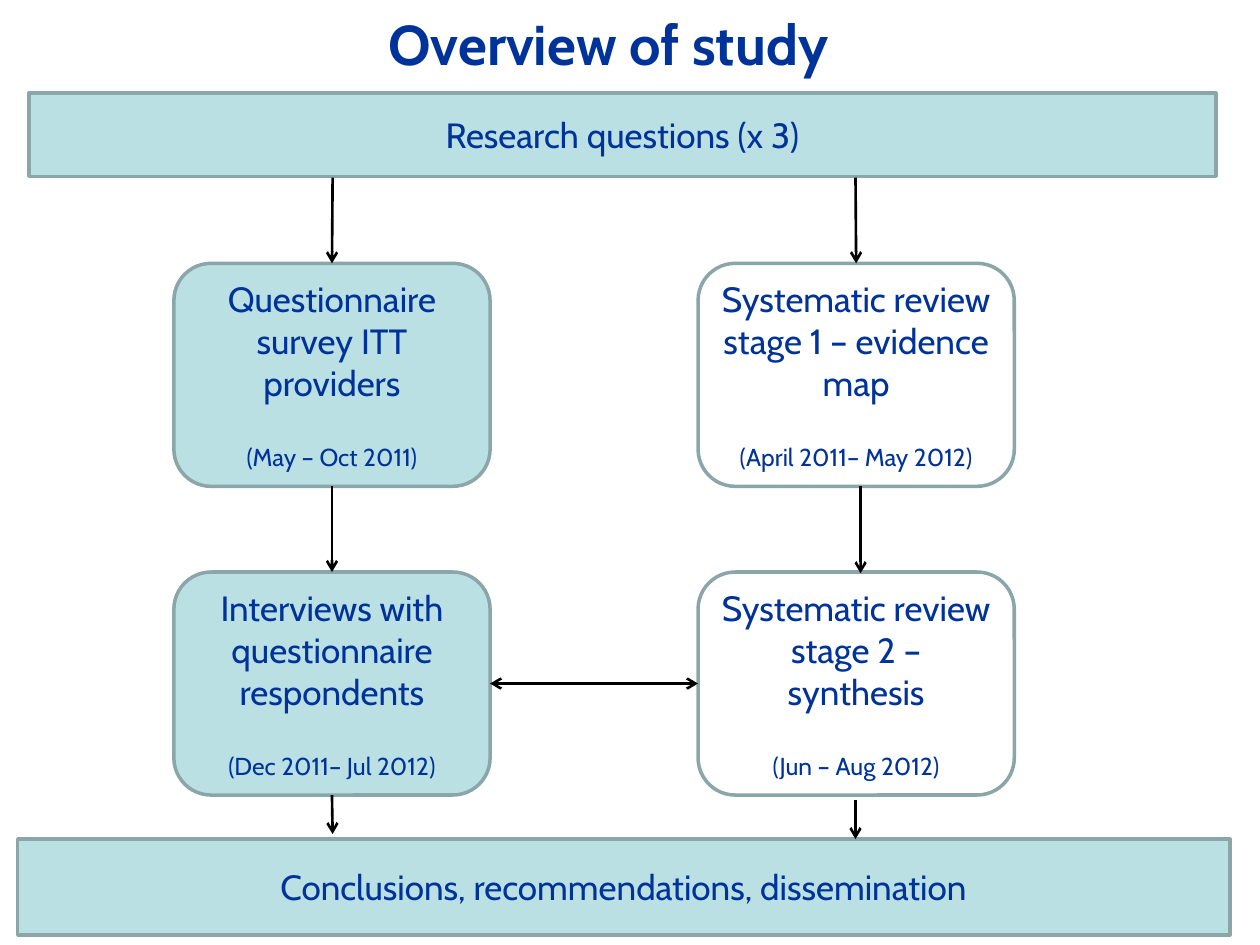
from lxml import etree
from pptx import Presentation
from pptx.dml.color import RGBColor
from pptx.enum.shapes import MSO_CONNECTOR as CONN, MSO_SHAPE as SHAPE
from pptx.enum.text import MSO_ANCHOR as ANCHOR, PP_ALIGN as ALIGN
from pptx.oxml.ns import qn
from pptx.util import Inches, Pt

NAVY = RGBColor(0x00, 0x33, 0x99)
AQUA = RGBColor(0xBB, 0xE0, 0xE3)
GREY = RGBColor(0x8A, 0xA6, 0xA8)
BLACK = RGBColor(0x00, 0x00, 0x00)
FONT = "Cabin"
TOP, LEFT, BOTTOM, RIGHT = range(4)


def add_text(tf, text, size=20, bold=False, before=0, first=True):
    p = tf.paragraphs[0] if first else tf.add_paragraph()
    p.alignment = ALIGN.CENTER
    if before:
        p.space_before = Pt(before)
    r = p.add_run()
    r.text = text
    r.font.name = FONT
    r.font.size = Pt(size)
    r.font.bold = bold
    r.font.color.rgb = NAVY


class FlowSlide:
    def __init__(self, prs):
        self.s = prs.slides.add_slide(prs.slide_layouts[6])

    def title(self, text, x, y, w, h):
        box = self.s.shapes.add_textbox(Inches(x), Inches(y), Inches(w), Inches(h))
        tf = box.text_frame
        tf.word_wrap = True
        tf.vertical_anchor = ANCHOR.MIDDLE
        add_text(tf, text, size=32, bold=True)

    def box(self, text, x, y, w, h, dates=None, kind=SHAPE.RECTANGLE, fill=AQUA):
        sp = self.s.shapes.add_shape(kind, Inches(x), Inches(y), Inches(w), Inches(h))
        sp.shadow.inherit = False
        if fill is None:
            sp.fill.background()
        else:
            sp.fill.solid()
            sp.fill.fore_color.rgb = fill
        sp.line.color.rgb = GREY
        sp.line.width = Pt(2)
        tf = sp.text_frame
        tf.word_wrap = True
        tf.vertical_anchor = ANCHOR.MIDDLE
        add_text(tf, text)
        if dates:
            add_text(tf, dates, size=14, before=22, first=False)
        return sp

    def arrow(self, x1, y1, x2, y2, begin=None, end=None, both=False):
        c = self.s.shapes.add_connector(
            CONN.STRAIGHT, Inches(x1), Inches(y1), Inches(x2), Inches(y2))
        if begin:
            c.begin_connect(*begin)
        if end:
            c.end_connect(*end)
        c.line.color.rgb = BLACK
        c.line.width = Pt(1.5)
        ln = c.line._get_or_add_ln()
        for tag in ["a:headEnd", "a:tailEnd"] if both else ["a:tailEnd"]:
            etree.SubElement(ln, qn(tag), type="arrow")
        etree.SubElement(c._element.spPr, qn("a:effectLst"))


def main():
    prs = Presentation()
    prs.slide_width, prs.slide_height = Inches(10), Inches(7.5)
    flow = FlowSlide(prs)

    # Title and opening bar
    flow.title("Overview of study", 0.33, -0.28, 9, 1.25)
    flow.box("Research questions (x 3)", 0.23, 0.74, 9.42, 0.66)

    # Two strands of two stages: survey on the left, review on the right
    stages = [
        [("Questionnaire survey ITT providers", "(May – Oct 2011)"),
         ("Systematic review stage 1 – evidence map", "(April 2011– May 2012)")],
        [("Interviews with questionnaire respondents", "(Dec 2011– Jul 2012)"),
         ("Systematic review stage 2 – synthesis", "(Jun – Aug 2012)")],
    ]
    columns = [(1.38, AQUA), (5.54, None)]
    rows = [2.09, 4.54]
    (survey, map_stage), (interviews, synthesis) = [
        [flow.box(text, x, y, 2.51, 1.77, dates, SHAPE.ROUNDED_RECTANGLE, fill)
         for (text, dates), (x, fill) in zip(row, columns)]
        for row, y in zip(stages, rows)]

    # Closing bar
    flow.box("Conclusions, recommendations, dissemination", 0.14, 6.66, 9.62, 0.76)

    # Arrows down the strands and between them
    flow.arrow(2.64, 1.41, 2.64, 2.09, end=(survey, TOP))
    flow.arrow(6.79, 1.41, 6.79, 2.09, end=(map_stage, TOP))
    flow.arrow(2.64, 3.86, 2.64, 4.54, (survey, BOTTOM), (interviews, TOP))
    flow.arrow(6.83, 3.86, 6.83, 4.55)
    flow.arrow(3.89, 5.42, 5.54, 5.42, (interviews, RIGHT), (synthesis, LEFT), both=True)
    flow.arrow(2.64, 6.31, 2.64, 6.62, begin=(interviews, BOTTOM))
    flow.arrow(6.79, 6.35, 6.79, 6.66)

    prs.save("out.pptx")


if __name__ == "__main__":
    main()
